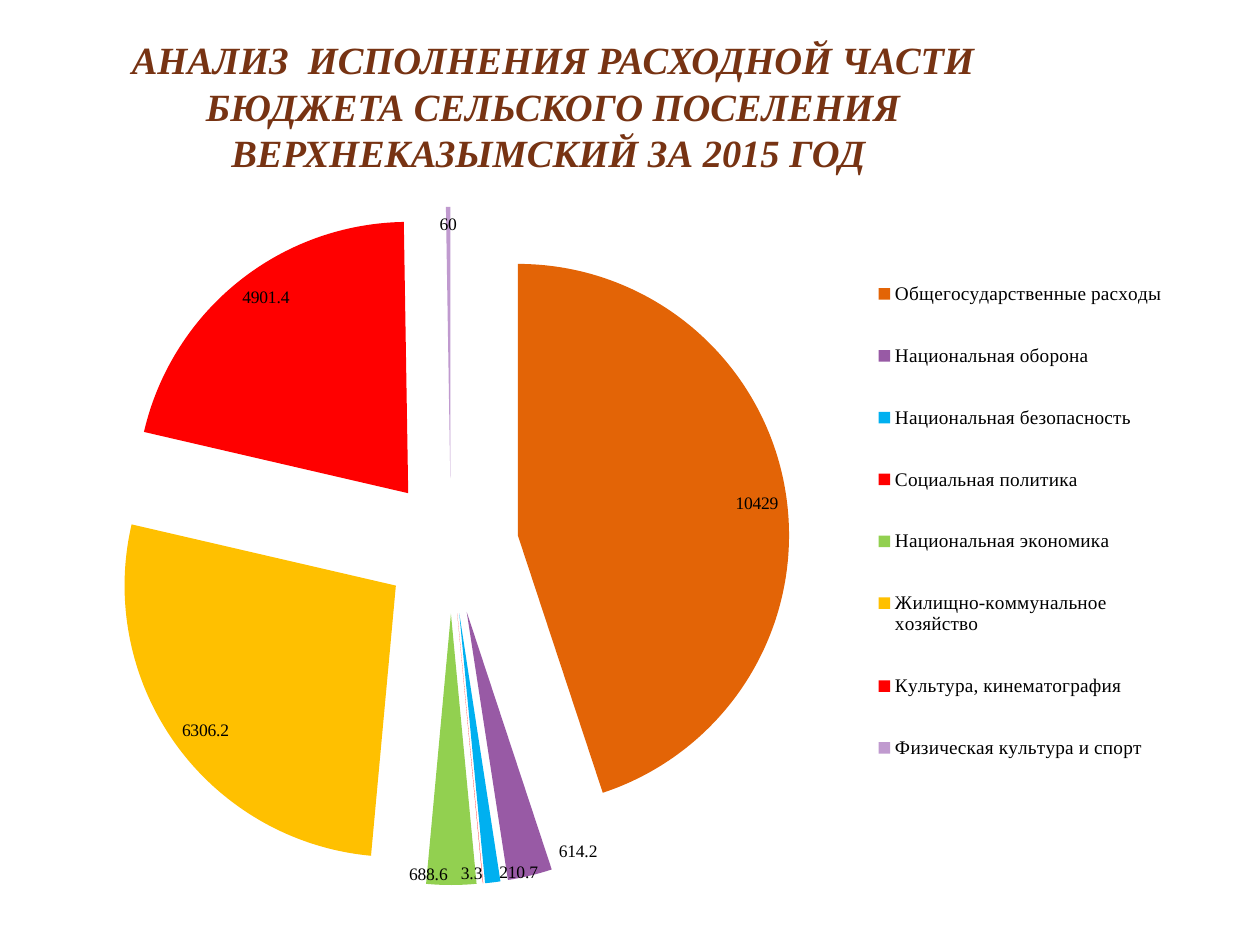
import pptx
import pptx.chart.data
import pptx.dml.color
import pptx.enum.chart
import pptx.enum.text
import pptx.oxml
import pptx.oxml.ns
import pptx.util

Pt = pptx.util.Pt
FONT = "Times New Roman"
TITLE = ("АНАЛИЗ  ИСПОЛНЕНИЯ РАСХОДНОЙ ЧАСТИ БЮДЖЕТА СЕЛЬСКОГО ПОСЕЛЕНИЯ "
         "ВЕРХНЕКАЗЫМСКИЙ ЗА 2015 ГОД ")
# Category, amount, slice colour
EXPENSES = [
    ("Общегосударственные расходы ", 10429, "E36406"),
    ("Национальная оборона ", 614.2, "985AA5"),
    ("Национальная безопасность ", 210.7, "00B0F0"),
    ("Социальная политика ", 3.3, "FF0000"),
    ("Национальная экономика ", 688.6, "92D050"),
    ("Жилищно-коммунальное хозяйство ", 6306.2, "FFC000"),
    ("Культура, кинематография ", 4901.4, "FF0000"),
    ("Физическая культура и спорт ", 60, "C09ACF"),
]
# Shifts of the crowded labels, as fractions of the chart
LABEL_SHIFTS = {1: (0.06, -0.01), 2: (0.04, 0.01), 3: (0, 0.01), 4: (-0.02, 0.01)}


def rgb(value):
    return pptx.dml.color.RGBColor.from_string(value)


def chart_xml(markup):
    return pptx.oxml.parse_xml(
        markup.replace(">", f" {pptx.oxml.ns.nsdecls('c')}>", 1))


def manual_layout(x, y, w=None, h=None, edge=False, inner=False):
    parts = []
    if inner:
        parts.append('<c:layoutTarget val="inner"/>')
    if edge:
        parts.append('<c:xMode val="edge"/><c:yMode val="edge"/>')
    for tag, value in zip("xywh", (x, y, w, h)):
        if value is not None:
            parts.append(f'<c:{tag} val="{value}"/>')
    return ("<c:layout><c:manualLayout>" + "".join(parts)
            + "</c:manualLayout></c:layout>")


def style_font(font, size, color="000000"):
    font.name = FONT
    font.size = Pt(size)
    font.color.rgb = rgb(color)


def add_title(slide, left, top, width, height):
    frame = slide.shapes.add_textbox(Pt(left), Pt(top), Pt(width), Pt(height)).text_frame
    frame.word_wrap = True
    frame.vertical_anchor = pptx.enum.text.MSO_ANCHOR.BOTTOM
    frame.margin_left = frame.margin_right = Pt(3.6)
    frame.margin_top = frame.margin_bottom = 0
    heading = frame.paragraphs[0]
    heading.alignment = pptx.enum.text.PP_ALIGN.CENTER
    run = heading.add_run()
    run.text = TITLE
    style_font(run.font, 22, "773313")
    run.font.bold = run.font.italic = True


def add_expense_pie(slide, left, top, width, height):
    names, amounts, colors = zip(*EXPENSES)
    data = pptx.chart.data.CategoryChartData()
    data.categories = names
    data.add_series("Series 1", amounts)
    chart = slide.shapes.add_chart(
        pptx.enum.chart.XL_CHART_TYPE.PIE,
        Pt(left), Pt(top), Pt(width), Pt(height), data).chart
    chart.has_title = False
    style_font(chart.font, 10)
    plot = chart.plots[0]
    plot.vary_by_categories = True
    expenses = plot.series[0]

    # Plot area
    plot_area = plot._element.getparent()
    for old in plot_area.findall(pptx.oxml.ns.qn("c:layout")):
        plot_area.remove(old)
    plot_area.insert(0, chart_xml(
        manual_layout(0.04, 0.03, 0.66, 0.95, edge=True, inner=True)))

    # Slices, pulled apart
    for index, color in enumerate(colors):
        fill = expenses.points[index].format.fill
        fill.solid()
        fill.fore_color.rgb = rgb(color)
    first_point = expenses._element.find(pptx.oxml.ns.qn("c:dPt"))
    first_point.addprevious(chart_xml('<c:explosion val="25"></c:explosion>'))
    for point in expenses._element.findall(pptx.oxml.ns.qn("c:dPt")):
        point.find(pptx.oxml.ns.qn("c:spPr")).addprevious(
            chart_xml('<c:explosion val="25"></c:explosion>'))

    # Amounts on the slices
    labels = expenses.data_labels
    labels.show_value = True
    labels.position = pptx.enum.chart.XL_LABEL_POSITION.INSIDE_END
    style_font(labels.font, 10)
    for index in LABEL_SHIFTS:
        label = expenses.points[index].data_label
        label.position = pptx.enum.chart.XL_LABEL_POSITION.INSIDE_END
        style_font(label.font, 10)
    for label in labels._element.findall(pptx.oxml.ns.qn("c:dLbl")):
        idx = label.find(pptx.oxml.ns.qn("c:idx"))
        idx.addnext(chart_xml(manual_layout(*LABEL_SHIFTS[int(idx.get("val"))])))

    # Legend
    chart.has_legend = True
    legend = chart.legend
    legend.position = pptx.enum.chart.XL_LEGEND_POSITION.RIGHT
    legend.include_in_layout = False
    style_font(legend.font, 11)
    for old in legend._element.findall(pptx.oxml.ns.qn("c:layout")):
        legend._element.remove(old)
    legend._element.find(pptx.oxml.ns.qn("c:legendPos")).addnext(
        chart_xml(manual_layout(0.74, 0.08, 0.26, 0.78, edge=True)))


def main():
    deck = pptx.Presentation()
    deck.slide_width, deck.slide_height = Pt(720), Pt(540)
    slide = deck.slides.add_slide(deck.slide_layouts[6])
    add_title(slide, 31, 15, 570, 85)
    add_expense_pie(slide, 14.4, 106, 657.4, 408)
    deck.save("out.pptx")


if __name__ == "__main__":
    main()
